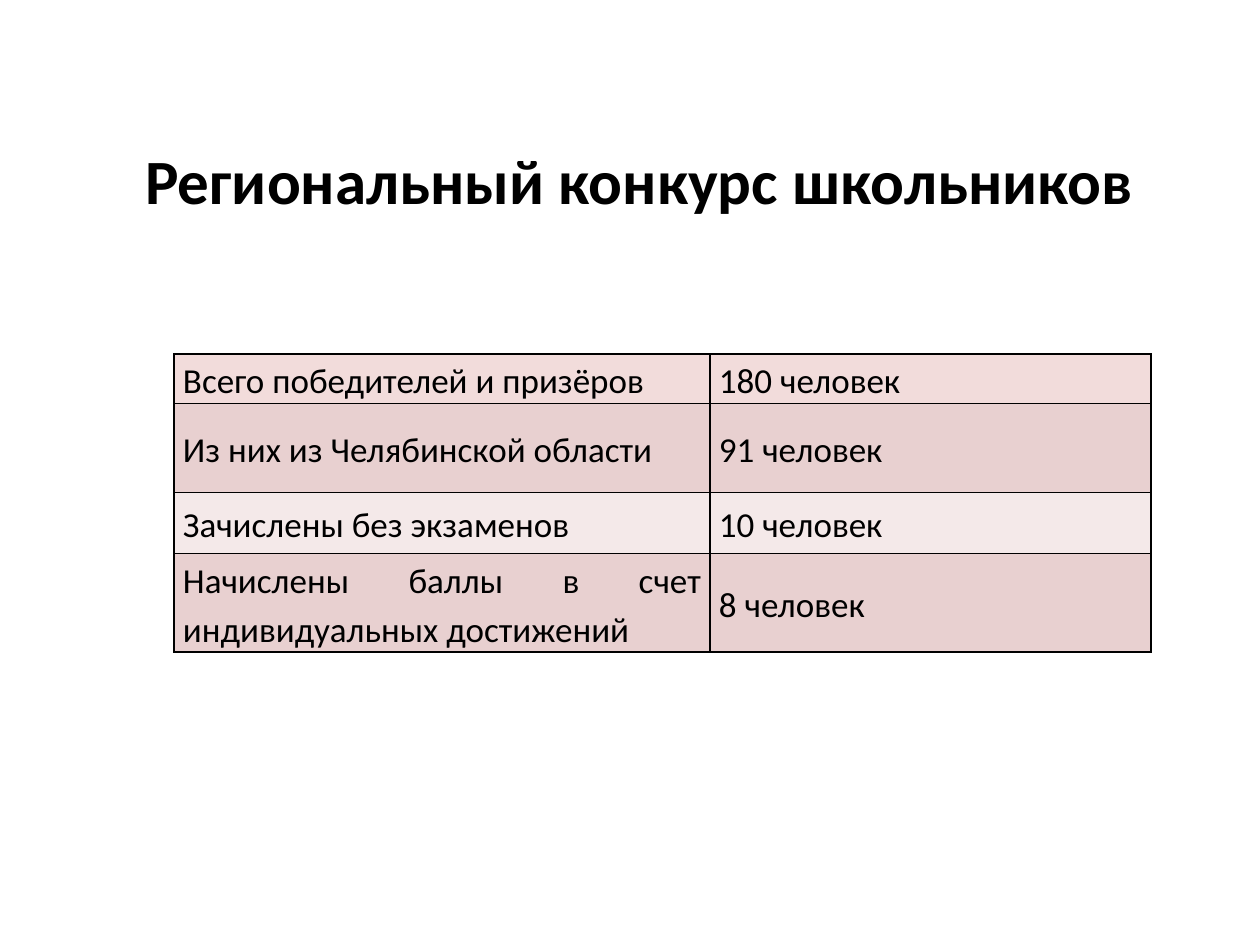
"""Builds the slide with the results of the regional school contest."""
from dataclasses import dataclass

from lxml.etree import SubElement
from pptx import Presentation
from pptx.dml.color import RGBColor
from pptx.enum.text import MSO_ANCHOR as Anchor, PP_ALIGN as Align
from pptx.oxml.ns import qn
from pptx.slide import Slide
from pptx.table import _Cell as Cell
from pptx.text.text import _Paragraph as Paragraph
from pptx.util import Emu, Pt

PX_PER_INCH = 126
FONT = "Calibri"
COLORS = {
    "ink": "000000",
    "first": "F2DCDB",
    "dark": "E8D0D0",
    "light": "F4E9E9",
}


@dataclass(frozen=True)
class ResultRow:
    label: str
    count: int
    height: int
    fill: str
    anchor: Anchor = Anchor.MIDDLE


COLUMN_WIDTHS = (536, 441)
RESULTS = (
    ResultRow("Всего победителей и призёров", 180, 48, "first", Anchor.TOP),
    ResultRow("Из них из Челябинской области", 91, 89, "dark"),
    ResultRow("Зачислены без экзаменов", 10, 61, "light"),
    ResultRow("Начислены баллы в счет индивидуальных достижений", 8, 97, "dark"),
)


def px(length: int) -> Emu:
    return Emu(round(length * 914400 / PX_PER_INCH))


def format_text(para: Paragraph, size: int, align: Align, bold: bool = False) -> None:
    para.alignment = align
    for span in para.runs:
        span.font.name = FONT
        span.font.size = Pt(size)
        span.font.bold = bold
        span.font.color.rgb = RGBColor.from_string(COLORS["ink"])


def add_borders(cell: Cell) -> None:
    properties = cell._tc.get_or_add_tcPr()
    for position, side in enumerate(("lnL", "lnR", "lnT", "lnB")):
        line = properties.makeelement(qn(f"a:{side}"), {"w": str(Pt(1))})
        properties.insert(position, line)
        fill = SubElement(line, qn("a:solidFill"))
        SubElement(fill, qn("a:srgbClr"), val=COLORS["ink"])


def fill_cell(cell: Cell, text: str, row: ResultRow) -> None:
    cell.text = text
    cell.vertical_anchor = row.anchor
    cell.margin_left = cell.margin_right = px(9)
    cell.margin_top = cell.margin_bottom = 0
    cell.fill.solid()
    cell.fill.fore_color.rgb = RGBColor.from_string(COLORS[row.fill])
    para = cell.text_frame.paragraphs[0]
    para.line_spacing = 1.15
    format_text(para, 20, Align.JUSTIFY)
    add_borders(cell)


def add_title(page: Slide, text: str) -> None:
    title = page.shapes.title
    title.left, title.top, title.width, title.height = map(px, (94, 135, 1091, 89))
    title.text_frame.text = text
    title.text_frame.word_wrap = True
    title.text_frame.vertical_anchor = Anchor.MIDDLE
    format_text(title.text_frame.paragraphs[0], 36, Align.CENTER, bold=True)


def add_results(page: Slide) -> None:
    height = sum(row.height for row in RESULTS)
    frame = page.shapes.add_table(
        len(RESULTS), len(COLUMN_WIDTHS),
        px(174), px(354), px(sum(COLUMN_WIDTHS)), px(height),
    )
    table = frame.table
    for column, width in zip(table.columns, COLUMN_WIDTHS):
        column.width = px(width)
    for index, row in enumerate(RESULTS):
        table.rows[index].height = px(row.height)
        fill_cell(table.cell(index, 0), row.label, row)
        fill_cell(table.cell(index, 1), f"{row.count} человек", row)


def main() -> None:
    deck = Presentation()
    deck.slide_width, deck.slide_height = px(1260), px(945)
    page = deck.slides.add_slide(deck.slide_layouts[5])
    add_title(page, "Региональный конкурс школьников")
    add_results(page)
    deck.save("out.pptx")


if __name__ == "__main__":
    main()
